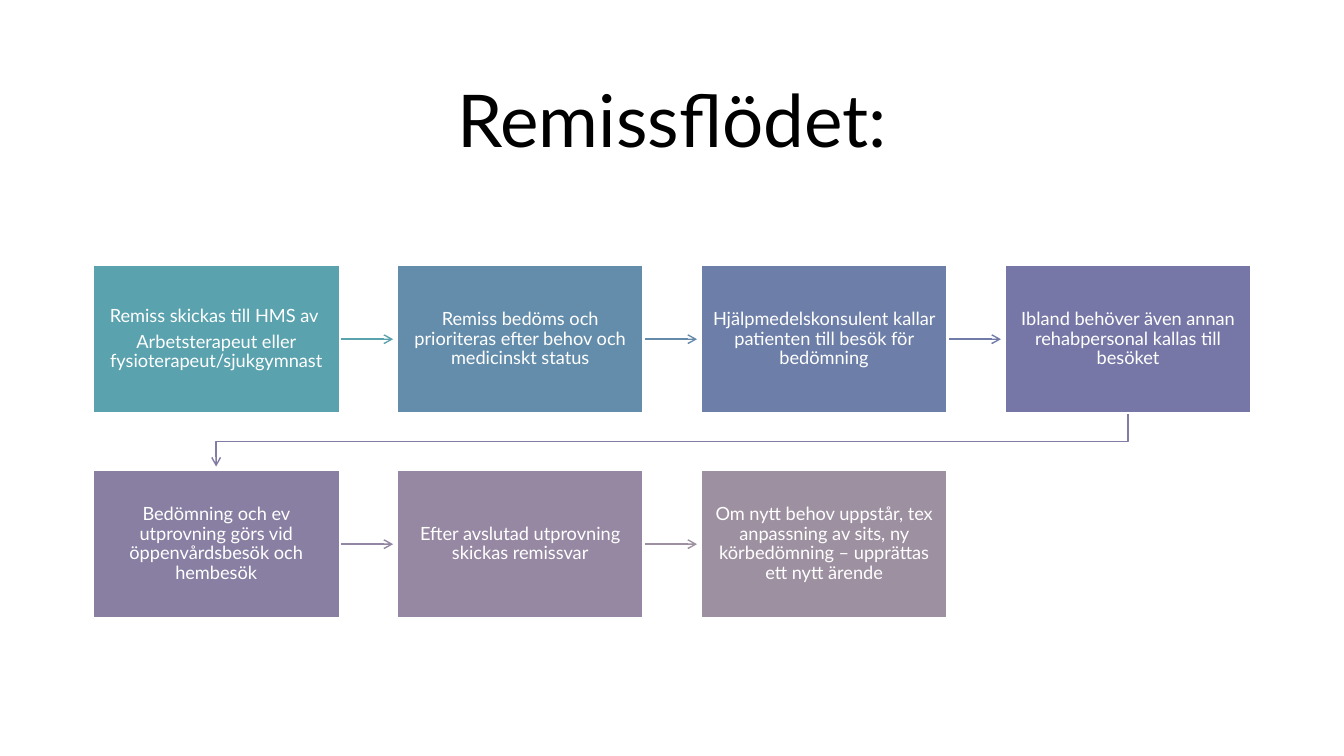
from lxml.etree import SubElement
from pptx import Presentation
from pptx.dml.color import RGBColor
from pptx.enum.shapes import MSO_CONNECTOR as CONN, MSO_SHAPE as SHAPE
from pptx.enum.text import MSO_ANCHOR as ANCHOR, PP_ALIGN as ALIGN
from pptx.oxml.ns import qn
from pptx.util import Pt

BLACK = RGBColor(0x00, 0x00, 0x00)
WHITE = RGBColor(0xFF, 0xFF, 0xFF)
TEAL = RGBColor(0x5A, 0xA2, 0xAE)
STEEL = RGBColor(0x64, 0x8D, 0xAB)
STEEL_LINE = RGBColor(0x66, 0x8A, 0xAA)
BLUE = RGBColor(0x6D, 0x7F, 0xA8)
BLUE_LINE = RGBColor(0x71, 0x7B, 0xA7)
INDIGO = RGBColor(0x76, 0x77, 0xA6)
INDIGO_LINE = RGBColor(0x82, 0x7C, 0xA4)
VIOLET = RGBColor(0x88, 0x7F, 0xA3)
VIOLET_LINE = RGBColor(0x93, 0x86, 0xA2)
MAUVE = RGBColor(0x96, 0x88, 0xA2)
GREY = RGBColor(0x9D, 0x90, 0xA0)

COLUMNS = 4
LEFT, TOP = 66.2, 189.4
BOX_W, BOX_H = 176.4, 105.8
STEP_X, STEP_Y = 217.1, 146.4
ARROW_GAP = 2.5

STEPS = [
    (["Remiss skickas till HMS av ", "Arbetsterapeut eller fysioterapeut/sjukgymnast"], TEAL, TEAL),
    (["Remiss bedöms och prioriteras efter behov och medicinskt status"], STEEL, STEEL_LINE),
    (["Hjälpmedelskonsulent kallar patienten till besök för bedömning"], BLUE, BLUE_LINE),
    (["Ibland behöver även annan rehabpersonal kallas till besöket"], INDIGO, INDIGO_LINE),
    (["Bedömning och ev utprovning görs vid öppenvårdsbesök och hembesök"], VIOLET, VIOLET_LINE),
    (["Efter avslutad utprovning skickas remissvar"], MAUVE, GREY),
    (["Om nytt behov uppstår, tex anpassning av sits, ny körbedömning – upprättas ett nytt ärende"],
     GREY, None),
]


class FlowSlide:
    """Holds the style and the slide that the flow is drawn on."""

    def __init__(self, s, font):
        self.s = s
        self.font = font

    def add_text(self, tf, paragraphs, size, color, space_after=0):
        tf.word_wrap = True
        tf.vertical_anchor = ANCHOR.MIDDLE
        for i, text in enumerate(paragraphs):
            p = tf.add_paragraph() if i else tf.paragraphs[0]
            p.alignment = ALIGN.CENTER
            p.line_spacing = 0.9
            p.space_after = Pt(space_after)
            r = p.add_run()
            r.text = text
            r.font.name = self.font
            r.font.size = Pt(size)
            r.font.color.rgb = color

    def title(self, text, x, y, w, h):
        box = self.s.shapes.add_textbox(Pt(x), Pt(y), Pt(w), Pt(h))
        self.add_text(box.text_frame, [text], 52, BLACK)

    def box(self, paragraphs, fill, x, y):
        sp = self.s.shapes.add_shape(SHAPE.RECTANGLE, Pt(x), Pt(y), Pt(BOX_W), Pt(BOX_H))
        sp.shadow.inherit = False
        sp.fill.solid()
        sp.fill.fore_color.rgb = fill
        sp.line.color.rgb = WHITE
        sp.line.width = Pt(1.5)
        tf = sp.text_frame
        tf.margin_left = tf.margin_right = Pt(8.6)
        tf.margin_top = tf.margin_bottom = Pt(9.1)
        self.add_text(tf, paragraphs, 13, WHITE, 4.5)
        return sp

    def arrow_line(self, shape, color):
        shape.line.color.rgb = color
        shape.line.width = Pt(1)
        SubElement(shape._element.spPr.find(qn("a:ln")), qn("a:tailEnd"), type="arrow")

    def arrow(self, box, color, x, y):
        start, mid = x + BOX_W, y + BOX_H / 2
        end = x + STEP_X - ARROW_GAP
        line = self.s.shapes.add_connector(CONN.STRAIGHT, Pt(start), Pt(mid), Pt(end), Pt(mid))
        line.begin_connect(box, 3)
        self.arrow_line(line, color)
        SubElement(line._element.spPr, qn("a:effectLst"))
        box._element.addprevious(line._element)

    def row_return(self, box, color, x, y):
        start_x, end_x = x + BOX_W / 2, LEFT + BOX_W / 2
        start_y, end_y = y + BOX_H, y + STEP_Y - ARROW_GAP
        turn_y = (y + BOX_H + y + STEP_Y) / 2
        outline = self.s.shapes.build_freeform(Pt(start_x), Pt(start_y))
        corners = [(start_x, turn_y), (end_x, turn_y), (end_x, end_y)]
        outline.add_line_segments([(Pt(cx), Pt(cy)) for cx, cy in corners], close=False)
        sp = outline.convert_to_shape()
        sp.shadow.inherit = False
        sp.fill.background()
        self.arrow_line(sp, color)
        box._element.addprevious(sp._element)


def main():
    prs = Presentation()
    prs.slide_width, prs.slide_height = Pt(960), Pt(540)
    flow = FlowSlide(prs.slides.add_slide(prs.slide_layouts[6]), "Lato")
    flow.title("Remissflödet:", 66, 44, 828, 89)
    for i, (paragraphs, fill, line_color) in enumerate(STEPS):
        row, column = divmod(i, COLUMNS)
        x, y = LEFT + column * STEP_X, TOP + row * STEP_Y
        box = flow.box(paragraphs, fill, x, y)
        if line_color is not None:
            link = flow.row_return if column == COLUMNS - 1 else flow.arrow
            link(box, line_color, x, y)
    prs.save("out.pptx")


if __name__ == "__main__":
    main()
